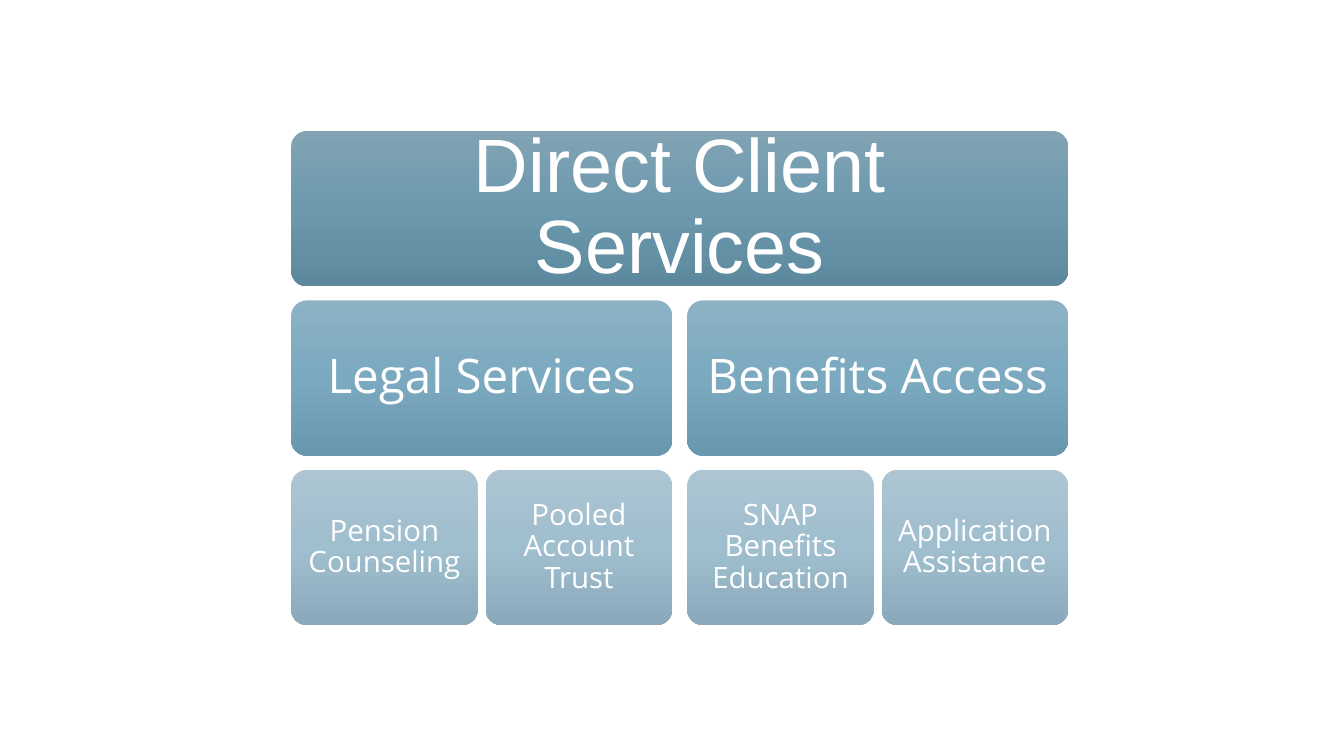
from copy import deepcopy
from dataclasses import dataclass

from pptx import Presentation
from pptx.dml.color import RGBColor
from pptx.enum.shapes import MSO_SHAPE as Shape
from pptx.enum.text import MSO_ANCHOR as Anchor, PP_ALIGN as Align
from pptx.oxml.ns import qn
from pptx.util import Cm, Pt


@dataclass(frozen=True)
class Level:
    """Look of one row of boxes: gradient, type and text margin in cm."""
    gradient: tuple
    size: int
    font: str
    margin: float


@dataclass(frozen=True)
class Theme:
    text: str = "FFFFFF"
    heading: Level = Level(("81A3B4", "6D99AE", "5D899E"), 54, "Arial", 0.6)
    branch: Level = Level(("8DB2C4", "7AA9C0", "6998AE"), 34, "Open Sans", 0.36)
    service: Level = Level(("ADC5D2", "9FBECE", "8BA9BA"), 21, "Open Sans", 0.23)


THEME = Theme()

# Layout in cm
LEFT, TOP = 7.34, 3.3
BOX_HEIGHT, ROW_STEP = 3.91, 4.27
SERVICE_WIDTH, SERVICE_GAP, BRANCH_GAP = 4.7, 0.2, 0.38

HEADING = "Direct Client Services"
BRANCHES = {
    "Legal Services": ["Pension Counseling", "Pooled Account Trust"],
    "Benefits Access": ["SNAP Benefits Education", "Application Assistance"],
}


def span_width(count, width, gap):
    """Width of several equal boxes with the gaps between them."""
    return count * width + (count - 1) * gap


def fill_gradient(shape, colours):
    """Fill from top to bottom with evenly spaced colours."""
    shape.fill.gradient()
    shape.fill.gradient_angle = 270
    stop_list = shape._element.spPr.find(qn("a:gradFill")).find(qn("a:gsLst"))
    while len(stop_list) < len(colours):
        stop_list.append(deepcopy(stop_list[0]))
    for index, (stop, colour) in enumerate(zip(shape.fill.gradient_stops, colours)):
        stop.position = index / (len(colours) - 1)
        stop.color.rgb = RGBColor.from_string(colour)


def write_text(frame, text, *, size, font, colour, margin):
    frame.word_wrap = True
    frame.vertical_anchor = Anchor.MIDDLE
    frame.margin_left = frame.margin_right = Cm(margin)
    frame.margin_top = frame.margin_bottom = Cm(margin)
    para = frame.paragraphs[0]
    para.alignment = Align.CENTER
    para.line_spacing = 0.9
    span = para.add_run()
    span.text = text
    span.font.size = Pt(size)
    span.font.name = font
    span.font.color.rgb = RGBColor.from_string(colour)


def add_box(page, text, level, *, left, row, width):
    box = page.shapes.add_shape(Shape.ROUNDED_RECTANGLE, Cm(left),
                                Cm(TOP + row * ROW_STEP), Cm(width), Cm(BOX_HEIGHT))
    box.adjustments[0] = 0.1
    box.shadow.inherit = False
    box.line.fill.background()
    fill_gradient(box, level.gradient)
    write_text(box.text_frame, text, size=level.size, font=level.font,
               colour=THEME.text, margin=level.margin)


def main():
    deck = Presentation()
    deck.slide_width, deck.slide_height = Cm(33.87), Cm(19.05)
    page = deck.slides.add_slide(deck.slide_layouts[6])

    # Heading across all branches
    branch_width = span_width(2, SERVICE_WIDTH, SERVICE_GAP)
    add_box(page, HEADING, THEME.heading, left=LEFT, row=0,
            width=span_width(len(BRANCHES), branch_width, BRANCH_GAP))

    # Each branch with its services below
    for column, (branch, services) in enumerate(BRANCHES.items()):
        branch_left = LEFT + column * (branch_width + BRANCH_GAP)
        add_box(page, branch, THEME.branch, left=branch_left, row=1, width=branch_width)
        for index, service in enumerate(services):
            add_box(page, service, THEME.service, row=2, width=SERVICE_WIDTH,
                    left=branch_left + index * (SERVICE_WIDTH + SERVICE_GAP))

    deck.save("out.pptx")


if __name__ == "__main__":
    main()
